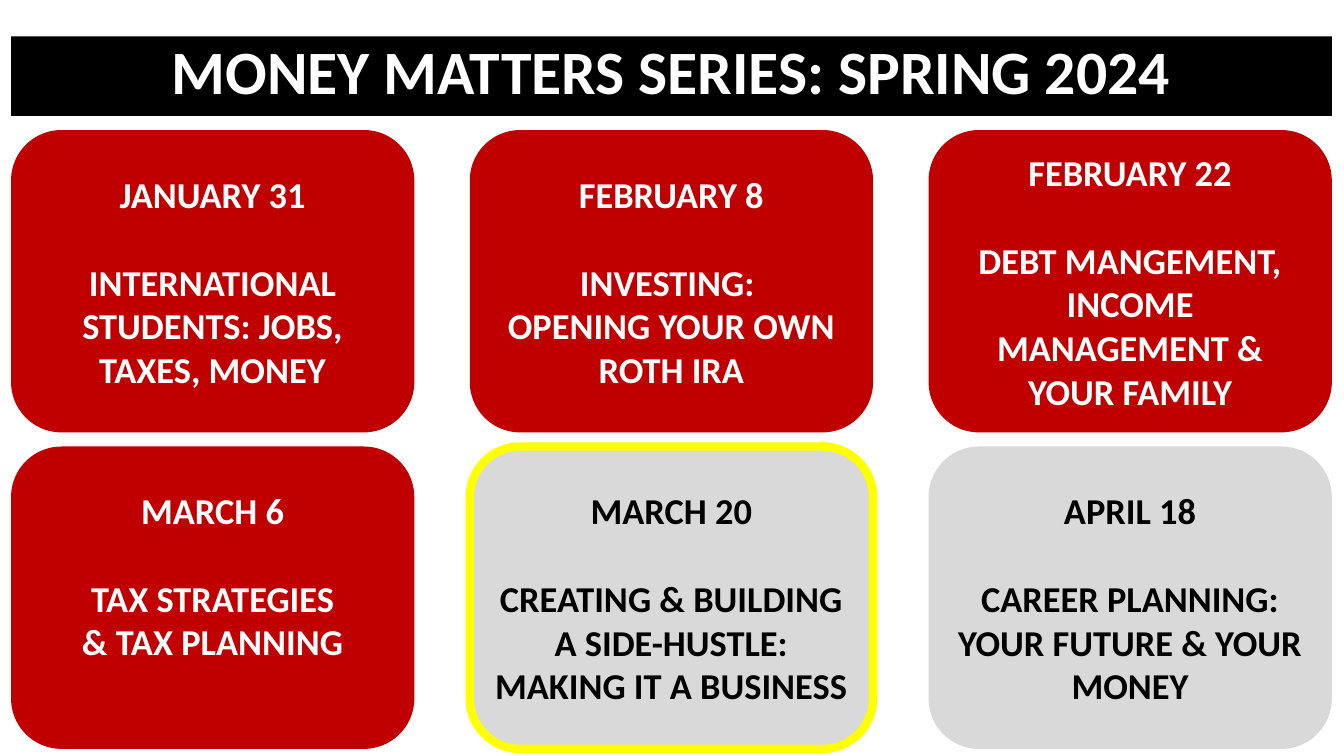
from dataclasses import dataclass

from pptx import Presentation
from pptx.dml.color import RGBColor
from pptx.enum.shapes import MSO_SHAPE as Preset
from pptx.enum.text import MSO_ANCHOR as Anchor, PP_ALIGN as Align
from pptx.shapes.autoshape import Shape
from pptx.slide import Slide
from pptx.text.text import _Paragraph as Paragraph
from pptx.util import Emu, Pt

EMU_PER_PX = 9144
LEFT, CARD_TOP = 11, 129
CARD_WIDTH, CARD_HEIGHT = 400, 300
COLUMN_STEP, ROW_STEP = 455, 314
COLUMNS = 3
BLANK_LINE, BOTTOM_INSET = 44, 5
RED, GRAY, YELLOW = "C00000", "D9D9D9", "FFFF00"
BLACK, WHITE = "000000", "FFFFFF"


@dataclass(frozen=True)
class Session:
    """One dated session of the series."""
    date: str
    topic: tuple[str, ...]
    fill: str = RED
    ink: str = WHITE
    outline: str | None = None
    space_below: int = 0


SESSIONS = (
    Session("JANUARY 31", ("INTERNATIONAL STUDENTS: JOBS, TAXES, MONEY",)),
    Session("FEBRUARY 8", ("INVESTING: ", "OPENING YOUR OWN ROTH IRA")),
    Session("FEBRUARY 22", ("DEBT MANGEMENT, INCOME MANAGEMENT & YOUR FAMILY",)),
    Session("MARCH 6", ("TAX STRATEGIES", "& TAX PLANNING"), space_below=BLANK_LINE),
    Session("MARCH 20", ("CREATING & BUILDING A SIDE-HUSTLE: MAKING IT A BUSINESS",),
            GRAY, BLACK, YELLOW),
    Session("APRIL 18", ("CAREER PLANNING: YOUR FUTURE & YOUR MONEY",), GRAY, BLACK),
)


def px(length: int) -> Emu:
    """Turn pixels into EMU."""
    return Emu(length * EMU_PER_PX)


def color(code: str) -> RGBColor:
    """Turn a hex string into a colour."""
    return RGBColor.from_string(code)


def add_panel(slide: Slide, preset: Preset, left: int, top: int,
              width: int, height: int, fill: str) -> Shape:
    """Add a filled shape without line or shadow."""
    panel = slide.shapes.add_shape(preset, px(left), px(top), px(width), px(height))
    panel.shadow.inherit = False
    panel.fill.solid()
    panel.fill.fore_color.rgb = color(fill)
    panel.line.fill.background()
    panel.text_frame.word_wrap = True
    return panel


def write(paragraph: Paragraph, lines: tuple[str, ...], size: int, ink: str) -> None:
    """Write centred bold lines into a paragraph."""
    paragraph.alignment = Align.CENTER
    for index, line in enumerate(lines):
        if index:
            paragraph.add_line_break()
        run = paragraph.add_run()
        run.text = line
        run.font.name = "Calibri"
        run.font.size = Pt(size)
        run.font.bold = True
        run.font.color.rgb = color(ink)


def add_banner(slide: Slide, title: str) -> None:
    """Add the series title bar."""
    width = (COLUMNS - 1) * COLUMN_STEP + CARD_WIDTH
    banner = add_panel(slide, Preset.RECTANGLE, LEFT, 36, width, 79, BLACK)
    banner.text_frame.vertical_anchor = Anchor.TOP
    heading = banner.text_frame.paragraphs[0]
    heading.line_spacing = 0.9
    write(heading, (title,), 44, WHITE)


def add_session(slide: Slide, session: Session, index: int) -> None:
    """Add a session card at its place in the grid."""
    row, column = divmod(index, COLUMNS)
    card = add_panel(slide, Preset.ROUNDED_RECTANGLE,
                     LEFT + column * COLUMN_STEP, CARD_TOP + row * ROW_STEP,
                     CARD_WIDTH, CARD_HEIGHT, session.fill)
    if session.outline:
        card.line.color.rgb = color(session.outline)
        card.line.width = Pt(6)
    frame = card.text_frame
    frame.vertical_anchor = Anchor.MIDDLE
    frame.margin_bottom = px(BOTTOM_INSET + session.space_below)
    write(frame.paragraphs[0], (session.date,), 26, session.ink)
    topic = frame.add_paragraph()
    topic.space_before = px(BLANK_LINE)
    write(topic, session.topic, 26, session.ink)


def main() -> None:
    """Build and save the schedule slide."""
    deck = Presentation()
    deck.slide_width, deck.slide_height = px(1333), px(750)
    slide = deck.slides.add_slide(deck.slide_layouts[6])
    add_banner(slide, "MONEY MATTERS SERIES: SPRING 2024")
    for index, session in enumerate(SESSIONS):
        add_session(slide, session, index)
    deck.save("out.pptx")


if __name__ == "__main__":
    main()
